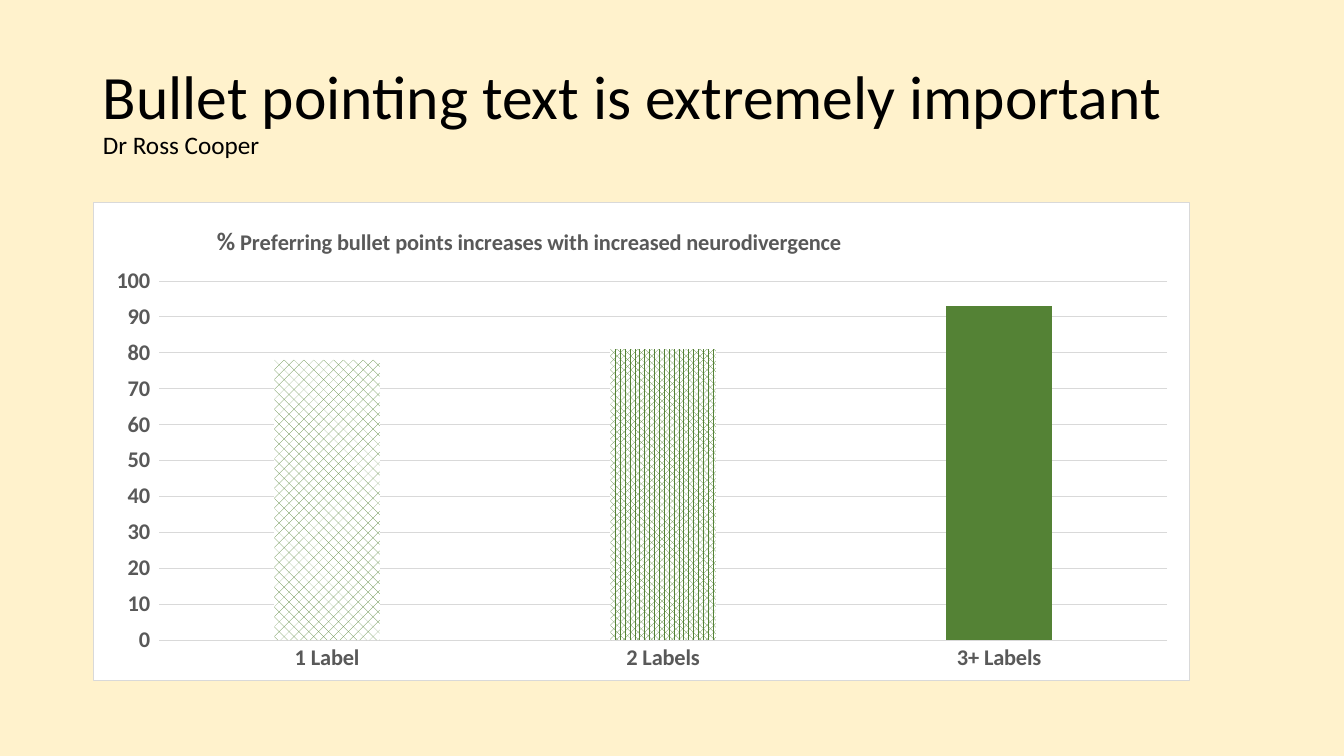
from dataclasses import dataclass

from lxml import etree
from pptx import Presentation
from pptx.chart.data import CategoryChartData
from pptx.dml.color import RGBColor
from pptx.enum.chart import XL_CHART_TYPE, XL_TICK_MARK
from pptx.enum.dml import MSO_PATTERN
from pptx.enum.text import MSO_ANCHOR, PP_ALIGN
from pptx.oxml import parse_xml
from pptx.oxml.ns import qn
from pptx.util import Inches, Pt

COLUMNS = XL_CHART_TYPE.COLUMN_CLUSTERED
NO_TICKS = XL_TICK_MARK.NONE
PATTERNS = (MSO_PATTERN.PERCENT_30, MSO_PATTERN.PERCENT_70)
LEFT = PP_ALIGN.LEFT
MIDDLE = MSO_ANCHOR.MIDDLE


@dataclass(frozen=True)
class Theme:
    font: str = "Calibri"
    cream: RGBColor = RGBColor(0xFF, 0xF2, 0xCC)
    black: RGBColor = RGBColor(0, 0, 0)
    white: RGBColor = RGBColor(0xFF, 0xFF, 0xFF)
    gray: RGBColor = RGBColor(0x59, 0x59, 0x59)
    rule: RGBColor = RGBColor(0xD9, 0xD9, 0xD9)
    green: RGBColor = RGBColor(0x54, 0x82, 0x35)
    headline: Pt = Pt(44)
    byline: Pt = Pt(18)
    percent_sign: Pt = Pt(18)
    label: Pt = Pt(16)
    rule_width: Pt = Pt(0.75)


theme = Theme()


def style_font(font, size, color, bold=False):
    font.name = theme.font
    font.size = size
    font.bold = bold
    font.color.rgb = color


def set_layout(layout, **fractions):
    """Place a chart part by fractions of the chart area."""
    for child in list(layout):
        layout.remove(child)
    manual = etree.SubElement(layout, qn("c:manualLayout"))
    if "w" in fractions:
        etree.SubElement(manual, qn("c:layoutTarget")).set("val", "inner")
    for mode in ("xMode", "yMode"):
        etree.SubElement(manual, qn(f"c:{mode}")).set("val", "edge")
    for name, value in fractions.items():
        etree.SubElement(manual, qn(f"c:{name}")).set("val", str(value))


deck = Presentation()
deck.slide_width, deck.slide_height = Inches(13.33), Inches(7.5)
page = deck.slides.add_slide(deck.slide_layouts[5])
page.background.fill.solid()
page.background.fill.fore_color.rgb = theme.cream

# Title and byline
title = page.shapes.title
title.left, title.top = Inches(0.92), Inches(0.4)
title.width, title.height = Inches(11.5), Inches(1.45)
title.text_frame.text = "Bullet pointing text is extremely important\vDr Ross Cooper"
title.text_frame.vertical_anchor = MIDDLE
para = title.text_frame.paragraphs[0]
para.alignment = LEFT
para.line_spacing = 0.9
for span, size in zip(para.runs, (theme.headline, theme.byline)):
    style_font(span.font, size, theme.black)

# Column chart
data = CategoryChartData()
data.categories = ["1 Label", "2 Labels", "3+ Labels"]
data.add_series("Series 1", (78, 81, 93))
chart = page.shapes.add_chart(
    COLUMNS, Inches(0.92), Inches(2), Inches(10.88), Inches(4.76), data
).chart
chart.has_legend = False
style_font(chart.font, theme.label, theme.gray)

# Chart heading
chart.has_title = True
heading = chart.chart_title
heading.include_in_layout = False
para = heading.text_frame.paragraphs[0]
for text, size in (
    ("%", theme.percent_sign),
    (" Preferring bullet points increases with increased neurodivergence", theme.label),
):
    span = para.add_run()
    span.text = text
    style_font(span.font, size, theme.gray, bold=True)
set_layout(heading.element.get_or_add_layout() if hasattr(heading.element, "get_or_add_layout")
           else heading.element.find(qn("c:layout")), x=0.11, y=0.04)

# Plot area
plot_area = chart.element.find(f".//{qn('c:plotArea')}")
plot_layout = plot_area.find(qn("c:layout"))
if plot_layout is None:
    plot_layout = etree.Element(qn("c:layout"))
    plot_area.insert(0, plot_layout)
set_layout(plot_layout, x=0.06, y=0.165, w=0.92, h=0.75)

# Chart background and border
chart.element.find(qn("c:chart")).addnext(parse_xml(
    '<c:spPr xmlns:c="http://schemas.openxmlformats.org/drawingml/2006/chart"'
    ' xmlns:a="http://schemas.openxmlformats.org/drawingml/2006/main">'
    f'<a:solidFill><a:srgbClr val="{theme.white}"/></a:solidFill>'
    f'<a:ln w="{theme.rule_width}"><a:solidFill><a:srgbClr val="{theme.rule}"/>'
    "</a:solidFill></a:ln></c:spPr>"
))

# Axes
for axis in (chart.category_axis, chart.value_axis):
    axis.major_tick_mark = axis.minor_tick_mark = NO_TICKS
    style_font(axis.tick_labels.font, theme.label, theme.gray, bold=True)
chart.value_axis.minimum_scale = 0
chart.value_axis.maximum_scale = 100
chart.value_axis.major_unit = 10
chart.value_axis.tick_labels.number_format = r"#,##0_);[Red]\(#,##0\)"
chart.value_axis.tick_labels.number_format_is_linked = False
chart.value_axis.format.line.fill.background()
for line in (chart.category_axis.format.line, chart.value_axis.major_gridlines.format.line):
    line.color.rgb = theme.rule
    line.width = theme.rule_width

# Columns
plot = chart.plots[0]
plot.vary_by_categories = False
plot.gap_width = 219
plot.overlap = -27
series = plot.series[0]
series.format.fill.solid()
series.format.fill.fore_color.rgb = theme.green
for index, pattern in enumerate(PATTERNS):
    fill = series.points[index].format.fill
    fill.patterned()
    fill.pattern = pattern
    fill.fore_color.rgb = theme.green
    fill.back_color.rgb = theme.white

deck.save("out.pptx")
